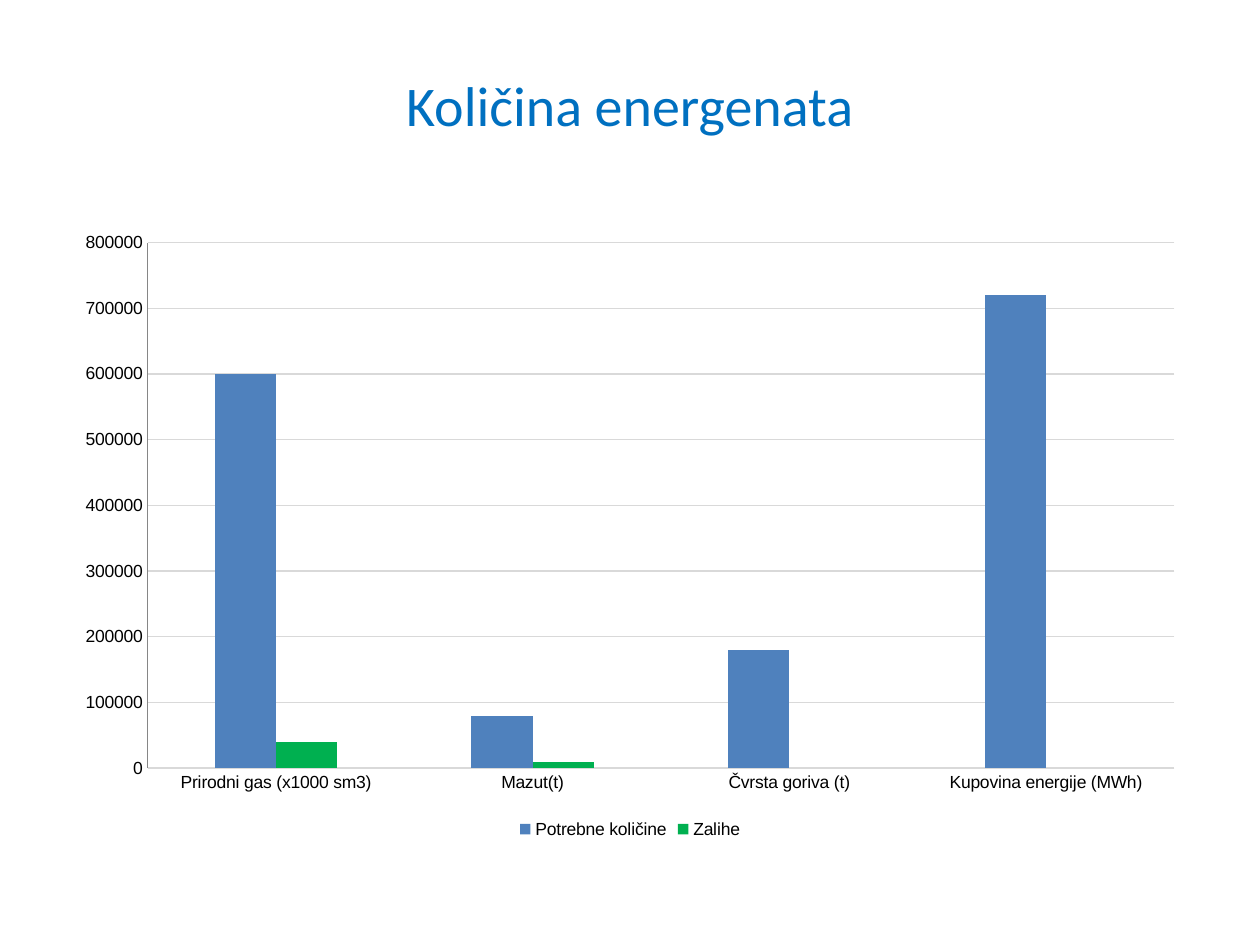
from pptx import Presentation
from pptx import util as u
from pptx.chart.data import CategoryChartData
from pptx.dml.color import RGBColor
from pptx.enum import chart as charts, text

TITLE = "Količina energenata"
CATEGORIES = ["Prirodni gas (x1000 sm3)", "Mazut(t)", "Čvrsta goriva (t)", "Kupovina energije (MWh)"]
SERIES = [
    ("Potrebne količine", [600000, 80000, 180000, 720000], "4F81BD"),
    ("Zalihe", [40000, 10000, None, None], "00B050"),
]
WIDTH, HEIGHT = u.Inches(10), u.Inches(7.5)
TITLE_BOX = (0.05, 0.04, 0.9, 0.14)
CHART_BOX = (0.05, 0.2333, 0.9, 0.66)


def color(value):
    return RGBColor.from_string(value)


def place(box):
    left, top, width, height = box
    return int(left * WIDTH), int(top * HEIGHT), int(width * WIDTH), int(height * HEIGHT)


def style_line(line, value):
    line.color.rgb = color(value)
    line.width = u.Pt(0.75)


def add_title(slide):
    title = slide.shapes.title
    title.left, title.top, title.width, title.height = place(TITLE_BOX)
    title.text_frame.text = TITLE
    title.text_frame.vertical_anchor = text.MSO_ANCHOR.MIDDLE
    paragraph = title.text_frame.paragraphs[0]
    paragraph.alignment = text.PP_ALIGN.CENTER
    font = paragraph.runs[0].font
    font.name, font.size = "Calibri", u.Pt(32)
    font.color.rgb = color("0070C0")


def add_energy_chart(slide):
    data = CategoryChartData()
    data.categories = CATEGORIES
    for name, values, _ in SERIES:
        data.add_series(name, values)
    chart = slide.shapes.add_chart(
        charts.XL_CHART_TYPE.COLUMN_CLUSTERED, *place(CHART_BOX), data
    ).chart
    chart.has_title = False
    chart.font.name, chart.font.size = "Arial", u.Pt(10)
    chart.font.color.rgb = color("000000")
    chart.has_legend = True
    chart.legend.position = charts.XL_LEGEND_POSITION.BOTTOM
    chart.legend.include_in_layout = False

    plot = chart.plots[0]
    plot.gap_width, plot.overlap, plot.vary_by_categories = 219, 0, False
    for series, (_, _, fill) in zip(plot.series, SERIES):
        series.format.fill.solid()
        series.format.fill.fore_color.rgb = color(fill)

    for axis, line in ((chart.category_axis, "D9D9D9"), (chart.value_axis, "868686")):
        axis.major_tick_mark = axis.minor_tick_mark = charts.XL_TICK_MARK.NONE
        style_line(axis.format.line, line)
    axis = chart.value_axis
    axis.minimum_scale, axis.maximum_scale, axis.major_unit = 0, 800000, 100000
    style_line(axis.major_gridlines.format.line, "D9D9D9")


def main():
    presentation = Presentation()
    presentation.slide_width, presentation.slide_height = WIDTH, HEIGHT
    slide = presentation.slides.add_slide(presentation.slide_layouts[5])
    add_title(slide)
    add_energy_chart(slide)
    presentation.save("out.pptx")


if __name__ == "__main__":
    main()
